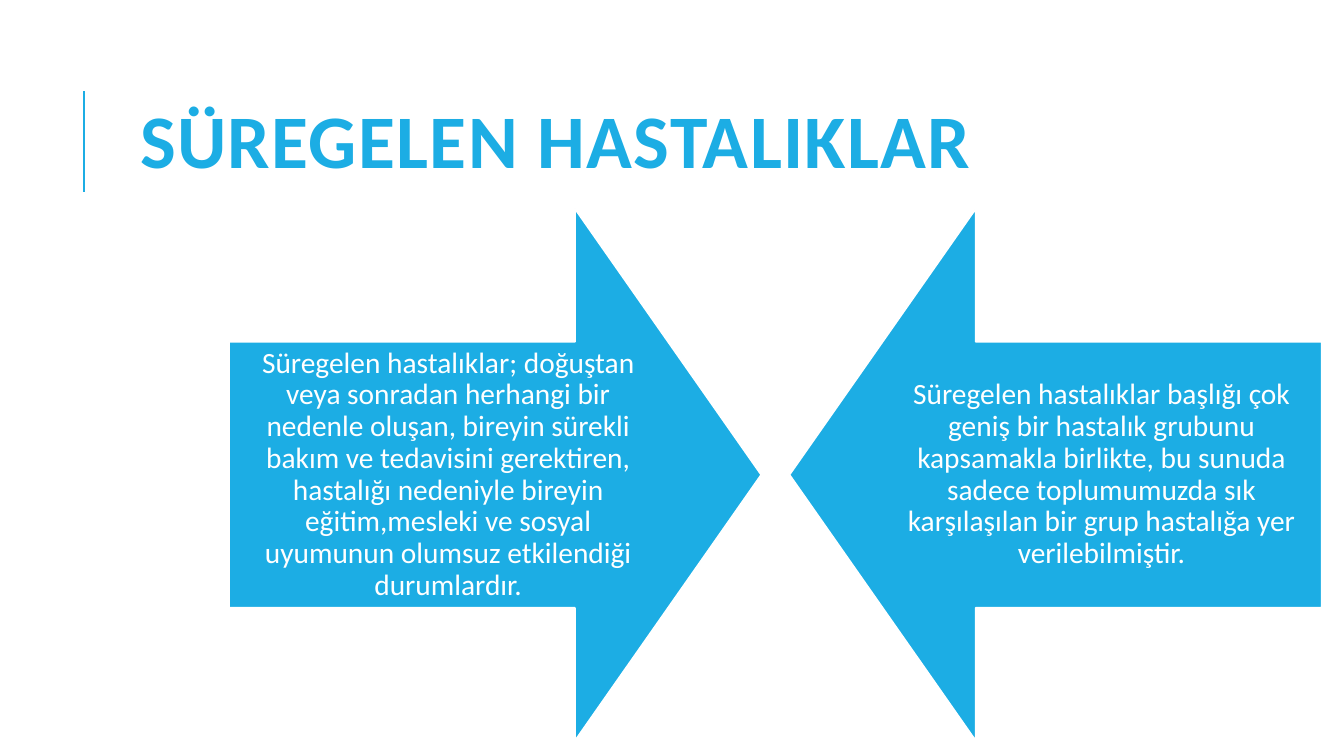
from lxml import etree
from pptx import Presentation
from pptx.dml.color import RGBColor
from pptx.enum.shapes import MSO_CONNECTOR, MSO_SHAPE
from pptx.enum.text import MSO_ANCHOR, PP_ALIGN
from pptx.oxml.ns import qn
from pptx.util import Inches, Pt

ARROW = MSO_SHAPE.DOWN_ARROW
LINE = MSO_CONNECTOR.STRAIGHT
MIDDLE = MSO_ANCHOR.MIDDLE
LEFT, CENTER = PP_ALIGN.LEFT, PP_ALIGN.CENTER
COLORS = {"blue": "1CADE4", "white": "FFFFFF"}
TOP, SIZE = 2.07, 5.28
WIDTH, HEIGHT = 4.35, SIZE / 2
ARROWS = [
    (2.27, 270, 2.27,
     "Süregelen hastalıklar; doğuştan veya sonradan herhangi bir nedenle "
     "oluşan, bireyin sürekli bakım ve tedavisini gerektiren, hastalığı "
     "nedeniyle bireyin eğitim,mesleki ve sosyal uyumunun olumsuz "
     "etkilendiği durumlardır."),
    (7.83, 90, 8.75,
     "Süregelen hastalıklar başlığı çok geniş bir hastalık grubunu "
     "kapsamakla birlikte, bu sunuda sadece toplumumuzda sık karşılaşılan "
     "bir grup hastalığa yer verilebilmiştir."),
]


def color(name):
    """Return the named colour."""
    return RGBColor.from_string(COLORS[name])


def add_run(para, text, size, tint, bold=False):
    """Add a formatted run to a paragraph and return it."""
    run = para.add_run()
    run.text = text
    font = run.font
    font.name, font.size, font.bold = "Calibri", Pt(size), bold
    font.color.rgb = color(tint)
    return run


def add_title(slide, text):
    """Place and fill the title."""
    title = slide.shapes.title
    title.left, title.top = Inches(1.12), Inches(0.64)
    title.width, title.height = Inches(10.63), Inches(1.64)
    frame = title.text_frame
    frame.word_wrap = True
    frame.vertical_anchor = MIDDLE
    frame.margin_left = Inches(0.27)
    para = frame.paragraphs[0]
    para.alignment, para.line_spacing = LEFT, 0.8
    run = add_run(para, text, 54, "blue", True)
    run.font._element.set("spc", "100")


def add_rule(slide):
    """Draw the upright line beside the title."""
    rule = slide.shapes.add_connector(
        LINE, Inches(0.83), Inches(1.9), Inches(0.83), Inches(0.9))
    rule.line.color.rgb = color("blue")
    rule.line.width = Pt(1.5)
    etree.SubElement(rule._element.spPr, qn("a:effectLst"))


def add_arrow(slide, left, turn):
    """Draw a block arrow turned sideways."""
    arrow = slide.shapes.add_shape(
        ARROW, Inches(left), Inches(TOP), Inches(SIZE), Inches(SIZE))
    arrow.rotation = turn
    arrow.adjustments[0], arrow.adjustments[1] = 0.5, 0.35
    arrow.shadow.inherit = False
    arrow.fill.solid()
    arrow.fill.fore_color.rgb = color("blue")
    arrow.line.color.rgb = color("white")
    arrow.line.width = Pt(1.25)


def add_label(slide, left, text):
    """Write centred text over an arrow's shaft."""
    top = TOP + (SIZE - HEIGHT) / 2
    box = slide.shapes.add_textbox(
        Inches(left), Inches(top), Inches(WIDTH), Inches(HEIGHT))
    frame = box.text_frame
    frame.word_wrap = True
    frame.vertical_anchor = MIDDLE
    frame.margin_left = frame.margin_right = Inches(0.16)
    frame.margin_top = frame.margin_bottom = Inches(0.16)
    para = frame.paragraphs[0]
    para.alignment, para.line_spacing = CENTER, 0.9
    add_run(para, text, 21, "white")


def main():
    """Build and save the slide."""
    deck = Presentation()
    deck.slide_width, deck.slide_height = Inches(13.33), Inches(7.5)
    slide = deck.slides.add_slide(deck.slide_layouts[5])
    add_rule(slide)
    add_title(slide, "SÜREGELEN HASTALIKLAR")
    for left, turn, start, text in ARROWS:
        add_arrow(slide, left, turn)
        add_label(slide, start, text)
    deck.save("out.pptx")


if __name__ == "__main__":
    main()
